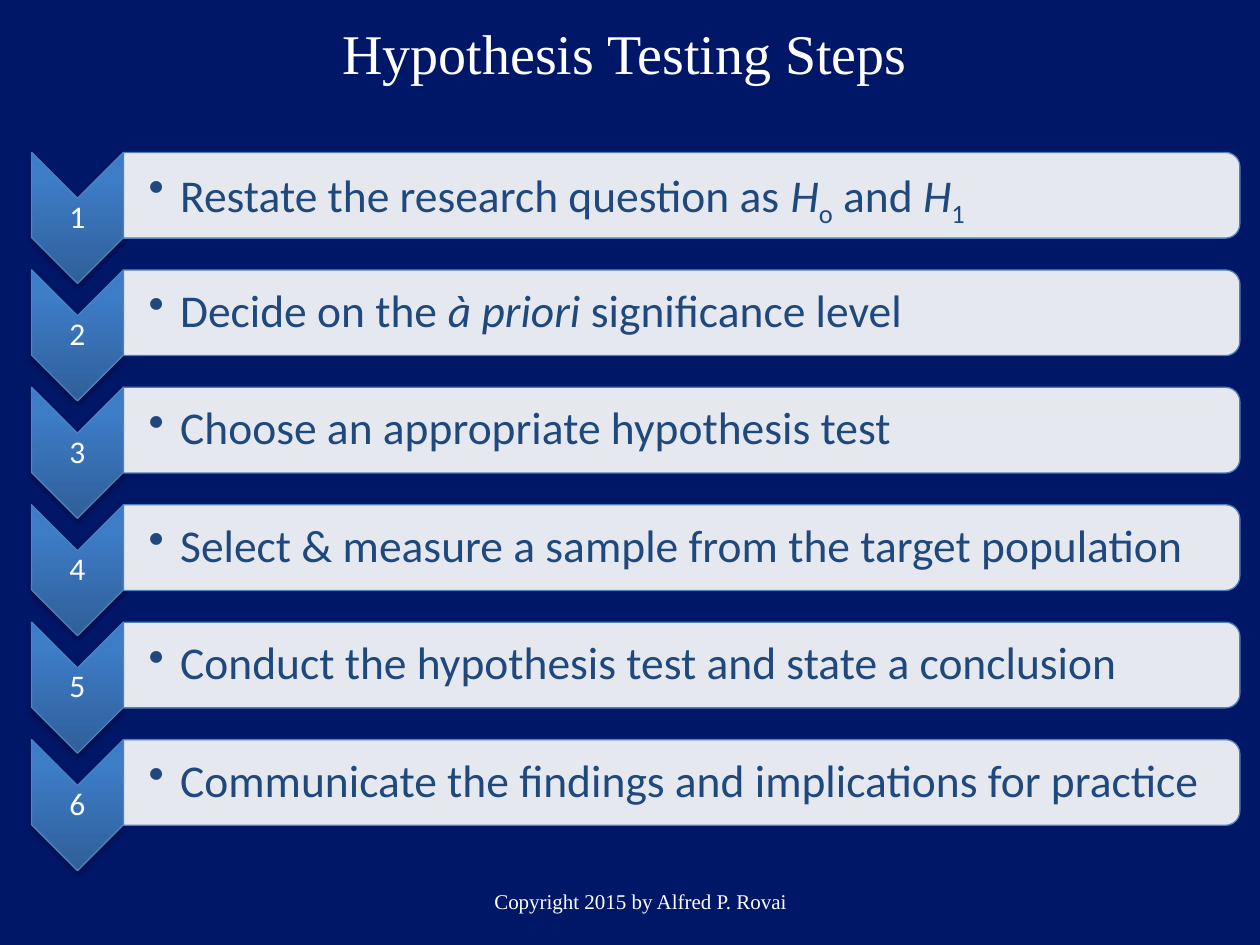
from dataclasses import dataclass
from typing import NamedTuple

from lxml import etree
from pptx import Presentation
from pptx.dml.color import RGBColor as Color
from pptx.enum.shapes import MSO_SHAPE as Shape
from pptx.enum.text import MSO_ANCHOR as Anchor, PP_ALIGN as Align
from pptx.oxml import parse_xml
from pptx.oxml.ns import nsdecls, qn
from pptx.util import Inches, Pt


@dataclass(frozen=True)
class Theme:
    background: str = "001667"
    light: str = "FFFFFF"
    text: str = "1F497D"
    outline: str = "4F81BD"
    shadow: str = "000000"
    gradient: tuple = ((0, "2F5F99"), (80, "3D7CC7"), (100, "3A7CCB"))
    heading_font: str = "Times New Roman"
    body_font: str = "Calibri"
    title_size: int = 32
    step_size: int = 26
    number_size: int = 18
    footer_size: int = 12


class Box(NamedTuple):
    """A rectangle in inches."""
    left: float
    top: float
    width: float
    height: float

    def lengths(self):
        return [Inches(value) for value in self]

    def turned(self):
        """Frame that covers this box after a quarter turn."""
        return Box(self.left + (self.width - self.height) / 2,
                   self.top + (self.height - self.width) / 2,
                   self.height, self.width)


THEME = Theme()
CHEVRON_WIDTH, CHEVRON_HEIGHT, BAR_HEIGHT = 0.73, 1.04, 0.68

# Each step is a list of (text, style) pieces
STEPS = [
    [("Restate the research question as ", ""), ("H", "italic"), ("o", "sub"),
     (" and ", ""), ("H", "italic"), ("1", "sub")],
    [("Decide on the ", ""), ("à priori ", "italic"), ("significance level", "")],
    [("Choose an appropriate hypothesis test", "")],
    [("Select & measure a sample from the target population", "")],
    [("Conduct the hypothesis test and state a conclusion", "")],
    [("Communicate the findings and implications for practice", "")],
]


def set_font(para, name, size, color):
    para.font.name = name
    para.font.size = Pt(size)
    para.font.color.rgb = Color.from_string(color)


def add_text_box(shapes, box, insets=None):
    """Add a wrapping, middle-anchored text box; return its first paragraph."""
    frame = shapes.add_textbox(*box.lengths()).text_frame
    frame.word_wrap = True
    frame.vertical_anchor = Anchor.MIDDLE
    if insets:
        left, other = insets
        frame.margin_left = Inches(left)
        frame.margin_top = frame.margin_right = frame.margin_bottom = Inches(other)
    return frame.paragraphs[0]


def add_turned_shape(shapes, kind, box):
    shape = shapes.add_shape(kind, *box.turned().lengths())
    shape.rotation = 90
    shape.shadow.inherit = False
    shape.line.color.rgb = Color.from_string(THEME.outline)
    shape.line.width = Pt(0.75)
    return shape


def set_gradient(shape):
    """Fill upwards on the page, whatever the rotation of the shape."""
    stops = "".join(f'<a:gs pos="{place * 1000}"><a:srgbClr val="{color}"/></a:gs>'
                    for place, color in THEME.gradient)
    gradient = parse_xml(
        f'<a:gradFill {nsdecls("a")} rotWithShape="0"><a:gsLst>{stops}</a:gsLst>'
        '<a:lin ang="16200000" scaled="0"/></a:gradFill>')
    shape.fill.background()
    properties = shape.element.spPr
    properties.replace(properties.find(qn("a:noFill")), gradient)


def set_shadow(shape):
    effects = shape.element.spPr.find(qn("a:effectLst"))
    effects.append(parse_xml(
        f'<a:outerShdw {nsdecls("a")} blurRad="{Pt(3.1)}" dist="{Pt(1.8)}" '
        f'dir="5400000" rotWithShape="0"><a:srgbClr val="{THEME.shadow}">'
        '<a:alpha val="35000"/></a:srgbClr></a:outerShdw>'))


def set_bullet(para):
    properties = para._p.get_or_add_pPr()
    properties.set("marL", str(Inches(0.25)))
    properties.set("indent", str(Inches(-0.25)))
    etree.SubElement(properties, qn("a:buChar")).set("char", "•")


def add_title(page, box):
    title = page.shapes.title
    title.left, title.top, title.width, title.height = box.lengths()
    title.text_frame.text = "Hypothesis Testing Steps"
    title.text_frame.vertical_anchor = Anchor.MIDDLE
    para = title.text_frame.paragraphs[0]
    para.alignment = Align.CENTER
    set_font(para, THEME.heading_font, THEME.title_size, THEME.light)


def add_chevron(shapes, box, number):
    chevron = add_turned_shape(shapes, Shape.CHEVRON, box)
    set_gradient(chevron)
    set_shadow(chevron)
    # The number sits between the notch and the point
    notch = box.width / 2
    label = Box(box.left, box.top + notch, box.width, box.height - 2 * notch)
    para = add_text_box(shapes, label, (0.01, 0.01))
    para.text = str(number)
    para.alignment = Align.CENTER
    para.line_spacing = 0.9
    set_font(para, THEME.body_font, THEME.number_size, THEME.light)


def add_bar(shapes, box, pieces):
    bar = add_turned_shape(shapes, Shape.ROUND_2_SAME_RECTANGLE, box)
    bar.fill.solid()
    bar.fill.fore_color.rgb = Color.from_string(THEME.light)
    color = bar.element.spPr.find(qn("a:solidFill"))[0]
    etree.SubElement(color, qn("a:alpha")).set("val", "90000")

    label = Box(box.left, box.top + 0.03, box.width - 0.03, box.height - 0.06)
    para = add_text_box(shapes, label, (0.2, 0.02))
    para.level = 1
    para.line_spacing = 0.9
    set_bullet(para)
    set_font(para, THEME.body_font, THEME.step_size, THEME.text)
    for text, style in pieces:
        span = para.add_run()
        span.text = text
        if style == "italic":
            span.font.italic = True
        elif style == "sub":
            span._r.get_or_add_rPr().set("baseline", "-25000")


def add_steps(page, box):
    shapes = page.shapes.add_group_shape().shapes
    pitch = (box.height - CHEVRON_HEIGHT) / (len(STEPS) - 1)
    for index, pieces in enumerate(STEPS):
        top = box.top + index * pitch
        add_chevron(shapes, Box(box.left, top, CHEVRON_WIDTH, CHEVRON_HEIGHT), index + 1)
        add_bar(shapes, Box(box.left + CHEVRON_WIDTH, top,
                            box.width - CHEVRON_WIDTH, BAR_HEIGHT), pieces)


def add_footer(page, box):
    para = add_text_box(page.shapes, box)
    para.text = "Copyright 2015 by Alfred P. Rovai"
    para.alignment = Align.CENTER
    set_font(para, THEME.heading_font, THEME.footer_size, THEME.light)


def main():
    deck = Presentation()
    deck.slide_width, deck.slide_height = Inches(10), Inches(7.5)
    page = deck.slides.add_slide(deck.slide_layouts[5])
    page.background.fill.solid()
    page.background.fill.fore_color.rgb = Color.from_string(THEME.background)

    add_title(page, Box(0.42, 0, 9.08, 0.83))
    add_footer(page, Box(1.75, 6.95, 6.67, 0.4))
    add_steps(page, Box(0.25, 1.21, 9.59, 5.7))
    deck.save("out.pptx")


if __name__ == "__main__":
    main()
